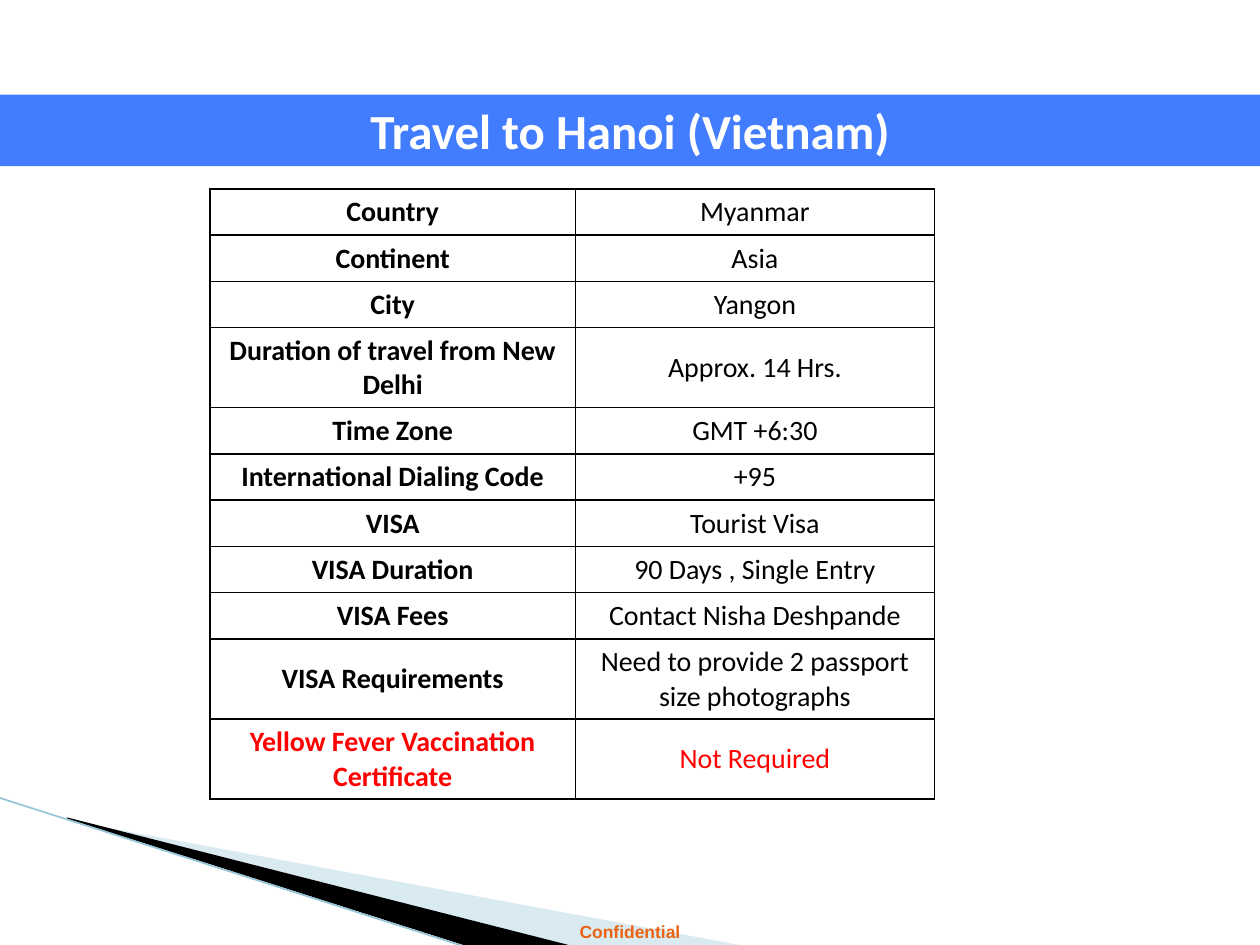
from dataclasses import dataclass

from lxml import etree
from pptx import Presentation
from pptx.dml.color import RGBColor
from pptx.enum.shapes import MSO_CONNECTOR
from pptx.enum.text import MSO_ANCHOR, MSO_AUTO_SIZE, PP_ALIGN
from pptx.oxml.ns import qn
from pptx.util import Pt

STRAIGHT = MSO_CONNECTOR.STRAIGHT
MIDDLE = MSO_ANCHOR.MIDDLE
CENTER = PP_ALIGN.CENTER
NO_AUTOSIZE = MSO_AUTO_SIZE.NONE

EMU_PER_POINT = 12700
SLIDE_WIDTH, SLIDE_HEIGHT = 720, 540
ROW_HEIGHT, TALL_ROW_HEIGHT = 26.4, 45.7


@dataclass(frozen=True)
class Theme:
    body_font: str = "Calibri"
    footer_font: str = "Arial"
    title_size: float = 28
    table_size: float = 16
    footer_size: float = 10
    band: str = "437DFF"
    paper: str = "FFFFFF"
    ink: str = "000000"
    alert: str = "FF0000"
    footer: str = "EB6312"
    pale_wedge: str = "A0CBDC"
    edge: str = "97C5D8"


class SlideBuilder:
    def __init__(self, slide, theme):
        self.slide = slide
        self.theme = theme

    def add_text(self, frame, text, font, size, color, bold=True):
        paragraph = frame.paragraphs[0]
        paragraph.alignment = CENTER
        run = paragraph.add_run()
        run.text = text
        run.font.name = font
        run.font.size = Pt(size)
        run.font.bold = bold
        run.font.color.rgb = RGBColor.from_string(color)

    def title(self, text, top, height):
        band = self.slide.shapes.title
        band.left, band.top = Pt(0), Pt(top)
        band.width, band.height = Pt(SLIDE_WIDTH), Pt(height)
        band.fill.solid()
        band.fill.fore_color.rgb = RGBColor.from_string(self.theme.band)
        frame = band.text_frame
        frame.auto_size = NO_AUTOSIZE
        frame.vertical_anchor = MIDDLE
        self.add_text(frame, text, self.theme.body_font, self.theme.title_size, self.theme.paper)

    def wedge(self, corners, color, opacity=100):
        outline = self.slide.shapes.build_freeform(*corners[0], scale=EMU_PER_POINT)
        outline.add_line_segments(corners[1:], close=True)
        wedge = outline.convert_to_shape()
        wedge.shadow.inherit = False
        wedge.line.fill.background()
        wedge.fill.solid()
        wedge.fill.fore_color.rgb = RGBColor.from_string(color)
        if opacity < 100:
            tint = wedge._element.spPr.find(f".//{qn('a:srgbClr')}")
            etree.SubElement(tint, qn("a:alpha"), val=str(opacity * 1000))

    def line(self, start, end, color, width):
        edge = self.slide.shapes.add_connector(STRAIGHT, *map(Pt, start + end))
        edge.line.color.rgb = RGBColor.from_string(color)
        edge.line.width = Pt(width)
        etree.SubElement(edge._element.spPr, qn("a:effectLst"))

    def footer(self, text, top, height):
        box = self.slide.shapes.add_textbox(Pt(0), Pt(top), Pt(SLIDE_WIDTH), Pt(height))
        box.text_frame.word_wrap = True
        self.add_text(box.text_frame, text, self.theme.footer_font,
                      self.theme.footer_size, self.theme.footer)

    def border(self, cell):
        properties = cell._tc.get_or_add_tcPr()
        for position, side in enumerate(("a:lnL", "a:lnR", "a:lnT", "a:lnB")):
            line = etree.Element(qn(side), w=str(EMU_PER_POINT))
            fill = etree.SubElement(line, qn("a:solidFill"))
            etree.SubElement(fill, qn("a:srgbClr"), val=self.theme.ink)
            properties.insert(position, line)

    def table(self, facts, tall, alerts, left, top, widths):
        heights = [TALL_ROW_HEIGHT if label in tall else ROW_HEIGHT for label, _ in facts]
        table = self.slide.shapes.add_table(
            len(facts), len(widths), Pt(left), Pt(top), Pt(sum(widths)), Pt(sum(heights))
        ).table
        table.first_row = False
        table.horz_banding = False
        for column, width in zip(table.columns, widths):
            column.width = Pt(width)
        for row, height, fact in zip(table.rows, heights, facts):
            row.height = Pt(height)
            color = self.theme.alert if fact[0] in alerts else self.theme.ink
            for index, (cell, text) in enumerate(zip(row.cells, fact)):
                cell.fill.background()
                cell.vertical_anchor = MIDDLE
                self.border(cell)
                self.add_text(cell.text_frame, text, self.theme.body_font,
                              self.theme.table_size, color, bold=index == 0)


VACCINATION = "Yellow Fever Vaccination Certificate"
TRAVEL_TIME = "Duration of travel from New Delhi"
REQUIREMENTS = "VISA Requirements"
TRAVEL_FACTS = [
    ("Country", "Myanmar"),
    ("Continent", "Asia"),
    ("City", "Yangon"),
    (TRAVEL_TIME, "Approx. 14 Hrs."),
    ("Time Zone", "GMT +6:30"),
    ("International Dialing Code", "+95"),
    ("VISA", "Tourist Visa"),
    ("VISA Duration", "90 Days , Single Entry"),
    ("VISA Fees", "Contact Nisha Deshpande"),
    (REQUIREMENTS, "Need to provide 2 passport size photographs"),
    (VACCINATION, "Not Required"),
]


def main():
    presentation = Presentation()
    presentation.slide_width = Pt(SLIDE_WIDTH)
    presentation.slide_height = Pt(SLIDE_HEIGHT)
    slide = presentation.slides.add_slide(presentation.slide_layouts[5])
    theme = Theme()
    builder = SlideBuilder(slide, theme)

    builder.wedge([(39.6, 468.7), (428.4, 540.7), (328.3, 540.7), (39.6, 468)],
                  theme.pale_wedge, opacity=40)
    builder.wedge([(38.2, 467.3), (329, 540.7), (267.8, 541.4), (38.9, 468)], theme.ink)
    builder.line((-0.7, 455.8), (267.1, 541.4), theme.edge, 0.95)
    builder.footer("Confidential", 522.7, 19.4)
    builder.title("Travel to Hanoi (Vietnam)", 54, 41)
    builder.table(TRAVEL_FACTS, {TRAVEL_TIME, REQUIREMENTS, VACCINATION}, {VACCINATION},
                  left=120, top=108, widths=(208.8, 205.2))

    presentation.save("out.pptx")


if __name__ == "__main__":
    main()
